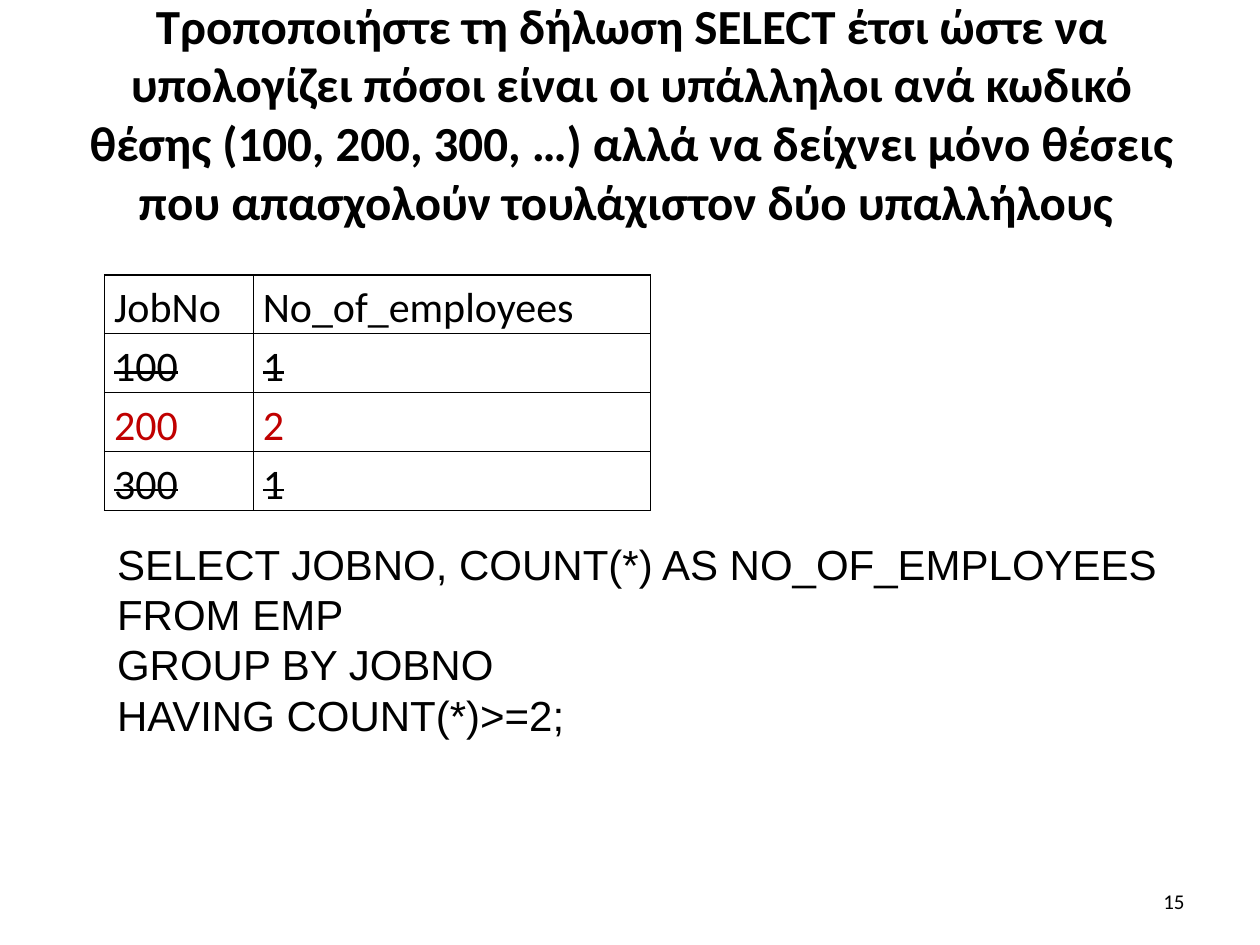
from lxml import etree
from pptx import Presentation
from pptx.dml.color import RGBColor
from pptx.enum.text import MSO_ANCHOR, MSO_AUTO_SIZE, PP_ALIGN
from pptx.oxml.ns import qn
from pptx.util import Pt

LEFT, CENTER, RIGHT = PP_ALIGN.LEFT, PP_ALIGN.CENTER, PP_ALIGN.RIGHT
TOP, MIDDLE = MSO_ANCHOR.TOP, MSO_ANCHOR.MIDDLE
NO_FIT = MSO_AUTO_SIZE.NONE
BLACK, RED = "000000", "C00000"

TITLE = (
    "Τροποποιήστε τη δήλωση SELECT έτσι ώστε να υπολογίζει πόσοι είναι "
    "οι υπάλληλοι ανά κωδικό θέσης (100, 200, 300, …) αλλά να δείχνει "
    "μόνο θέσεις που απασχολούν τουλάχιστον δύο υπαλλήλους "
)
ROWS = [
    (("JobΝο", "No_of_employees"), {}),
    (("100", "1"), {"strike": True}),
    (("200", "2"), {"color": RED}),
    (("300", "1"), {"strike": True}),
]
QUERY = [
    "SELECT JOBNO, COUNT(*) AS NO_OF_EMPLOYEES",
    "FROM EMP",
    "GROUP BY JOBNO",
    "HAVING COUNT(*)>=2;",
]
PAGE = "15"
WIDTHS = (85, 226.8)
ROW_H = 33.7
EDGE = 59.8


def paint(text):
    return RGBColor.from_string(text)


def write(frame, lines, size=24, font="Calibri", color=BLACK, bold=False,
          strike=False, align=LEFT, anchor=TOP, space=1.0):
    frame.word_wrap = True
    frame.vertical_anchor = anchor
    for i, line in enumerate(lines):
        para = frame.paragraphs[0] if i == 0 else frame.add_paragraph()
        para.alignment = align
        para.line_spacing = space
        run = para.add_run()
        run.text = line
        run.font.size = Pt(size)
        run.font.name = font
        run.font.bold = bold
        run.font.color.rgb = paint(color)
        if strike:
            run.font._element.set("strike", "sngStrike")


def place(shape, left, top, width, height):
    shape.left, shape.top = Pt(left), Pt(top)
    shape.width, shape.height = Pt(width), Pt(height)


def border(cell):
    props = cell._tc.get_or_add_tcPr()
    for i, side in enumerate(("lnL", "lnR", "lnT", "lnB")):
        line = etree.Element(qn("a:" + side), w=str(Pt(1)))
        fill = etree.SubElement(line, qn("a:solidFill"))
        etree.SubElement(fill, qn("a:srgbClr"), val=BLACK)
        props.insert(i, line)


def add_grid(slide):
    frame = slide.shapes.add_table(
        len(ROWS), len(WIDTHS), Pt(EDGE), Pt(157),
        Pt(sum(WIDTHS)), Pt(ROW_H * len(ROWS)))
    table = frame.table
    for col, width in zip(table.columns, WIDTHS):
        col.width = Pt(width)
    for row, (texts, style) in zip(table.rows, ROWS):
        row.height = Pt(ROW_H)
        for cell, text in zip(row.cells, texts):
            cell.margin_left = cell.margin_right = Pt(5.4)
            cell.margin_top = cell.margin_bottom = 0
            cell.fill.background()
            border(cell)
            write(cell.text_frame, [text], space=1.15, **style)


def main():
    deck = Presentation()
    deck.slide_width, deck.slide_height = Pt(720), Pt(540)
    slide = deck.slides.add_slide(deck.slide_layouts[5])

    title = slide.shapes.title
    place(title, 36.7, 28.8, 648, 71.3)
    title.text_frame.auto_size = NO_FIT
    write(title.text_frame, [TITLE], size=28, bold=True,
          align=CENTER, anchor=MIDDLE)

    add_grid(slide)

    query = slide.shapes.add_textbox(Pt(EDGE), Pt(304), Pt(625.7), Pt(123.8))
    write(query.text_frame, QUERY, font="Arial")

    page = slide.shapes.add_textbox(Pt(516), Pt(500.5), Pt(168), Pt(28.8))
    write(page.text_frame, [PAGE], size=12, align=RIGHT, anchor=MIDDLE)

    deck.save("out.pptx")


if __name__ == "__main__":
    main()
